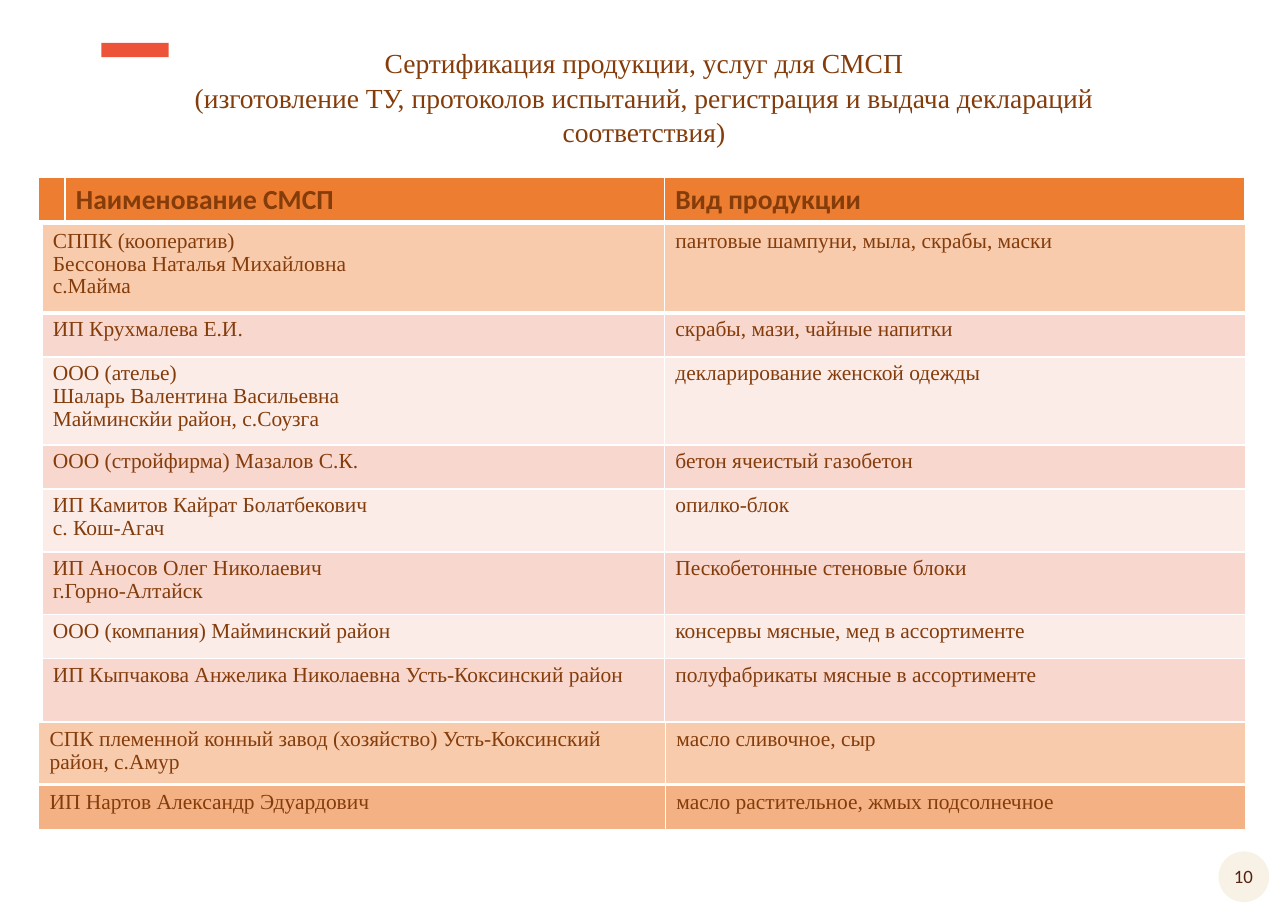
from lxml.etree import SubElement
from pptx import Presentation
from pptx.dml.color import RGBColor
from pptx.enum.shapes import MSO_SHAPE
from pptx.enum.text import MSO_ANCHOR, PP_ALIGN
from pptx.oxml.ns import qn
from pptx.util import Inches, Pt

COLORS = {
    "text": "843C0B", "header": "ED7D31", "peach": "F8CBAD", "orange": "F4B183",
    "pink": "F8D7CE", "pale": "FCECE8", "border": "FFFFFF",
    "accent": "ED5338", "badge": "F7F2E5", "number": "562212",
}
SERIF, SANS = "Times New Roman", "Calibri"

TITLE = [
    "Сертификация продукции, услуг для СМСП",
    "(изготовление ТУ, протоколов испытаний, регистрация и выдача деклараций соответствия)",
]
PAGE_NUMBER = "10"

HEADER = [(0.41, "header", 3, [[], ["Наименование СМСП"], ["Вид продукции"]])]
PRODUCERS = [
    (0.8, "peach", 3, [["СППК (кооператив)", "Бессонова Наталья Михайловна", "с.Майма"],
                       ["пантовые шампуни, мыла, скрабы, маски"]]),
    (0.4, "pink", 1, [["ИП Крухмалева Е.И."], ["скрабы, мази, чайные напитки"]]),
    (0.8, "pale", 1, [["ООО (ателье)", "Шаларь Валентина Васильевна", "Майминскйи район, с.Соузга"],
                      ["декларирование женской одежды"]]),
    (0.4, "pink", 1, [["ООО (стройфирма) Мазалов С.К."], ["бетон ячеистый газобетон"]]),
    (0.57, "pale", 1, [["ИП Камитов Кайрат Болатбекович", "с. Кош-Агач"], ["опилко-блок"]]),
    (0.57, "pink", 1, [["ИП Аносов Олег Николаевич", "г.Горно-Алтайск"],
                       ["Пескобетонные стеновые блоки"]]),
    (0.4, "pale", 1, [["ООО (компания) Майминский район"],
                      ["консервы мясные, мед в ассортименте"]]),
    (0.57, "pink", 1, [["ИП Кыпчакова Анжелика Николаевна Усть-Коксинский район"],
                       ["полуфабрикаты мясные в ассортименте"]]),
]
STUD_FARM = [(0.57, "peach", 3, [
    ["СПК племенной конный завод (хозяйство) Усть-Коксинский район, с.Амур"],
    ["масло сливочное, сыр"]])]
OIL_PRODUCER = [(0.41, "orange", 3, [
    ["ИП Нартов Александр Эдуардович"], ["масло растительное, жмых подсолнечное"]])]

TABLES = [
    (0.35, 1.61, [0.24, 5.44, 5.27], HEADER, (SANS, 18, True, 1.0)),
    (0.38, 2.04, [5.65, 5.28], PRODUCERS, (SERIF, 14, False, 0.96)),
    (0.35, 6.56, [5.69, 5.27], STUD_FARM, (SERIF, 14, False, 0.96)),
    (0.35, 7.13, [5.69, 5.27], OIL_PRODUCER, (SERIF, 14, False, 0.96)),
]


def rgb(name):
    return RGBColor.from_string(COLORS[name])


def write(frame, lines, font, size, bold=False, spacing=1.0, align=PP_ALIGN.LEFT, color="text"):
    for index, line in enumerate(lines):
        paragraph = frame.add_paragraph() if index else frame.paragraphs[0]
        paragraph.alignment = align
        paragraph.line_spacing = spacing
        run = paragraph.add_run()
        run.text = line
        run.font.name, run.font.size, run.font.bold = font, Pt(size), bold
        run.font.color.rgb = rgb(color)


def add_block(slide, kind, left, top, width, height, color):
    block = slide.shapes.add_shape(kind, Inches(left), Inches(top), Inches(width), Inches(height))
    block.shadow.inherit = False
    block.fill.solid()
    block.fill.fore_color.rgb = rgb(color)
    block.line.fill.background()


def add_label(slide, left, top, width, height, lines, font, size, **style):
    label = slide.shapes.add_textbox(Inches(left), Inches(top), Inches(width), Inches(height))
    label.text_frame.word_wrap = True
    write(label.text_frame, lines, font, size, align=PP_ALIGN.CENTER, **style)


def set_borders(cell, bottom_width):
    properties = cell._tc.get_or_add_tcPr()
    sides = [("a:lnL", 1), ("a:lnR", 1), ("a:lnT", 1), ("a:lnB", bottom_width)]
    for position, (side, width) in enumerate(sides):
        border = SubElement(properties, qn(side), w=str(Pt(width)))
        SubElement(SubElement(border, qn("a:solidFill")), qn("a:srgbClr"), val=COLORS["border"])
        properties.insert(position, border)


def add_grid(slide, left, top, widths, rows, style):
    height = sum(row[0] for row in rows)
    grid = slide.shapes.add_table(len(rows), len(widths), Inches(left), Inches(top),
                                  Inches(sum(widths)), Inches(height)).table
    grid.first_row = grid.horz_banding = False
    for column, width in zip(grid.columns, widths):
        column.width = Inches(width)
    font, size, bold, spacing = style
    for row, (row_height, color, bottom_width, texts) in zip(grid.rows, rows):
        row.height = Inches(row_height)
        for cell, lines in zip(row.cells, texts):
            cell.fill.solid()
            cell.fill.fore_color.rgb = rgb(color)
            cell.vertical_anchor = MSO_ANCHOR.TOP
            set_borders(cell, bottom_width)
            write(cell.text_frame, lines, font, size, bold, spacing)


def main():
    deck = Presentation()
    deck.slide_width, deck.slide_height = Inches(11.69), Inches(8.27)
    slide = deck.slides.add_slide(deck.slide_layouts[6])
    add_block(slide, MSO_SHAPE.OVAL, 11.06, 7.73, 0.46, 0.46, "badge")
    add_label(slide, 11.03, 7.8, 0.51, 0.31, [PAGE_NUMBER], SANS, 12.3, color="number")
    add_block(slide, MSO_SHAPE.RECTANGLE, 0.92, 0.39, 0.61, 0.13, "accent")
    add_label(slide, 1.49, 0.36, 8.71, 1.01, TITLE, SERIF, 18, spacing=1.04)
    for table in TABLES:
        add_grid(slide, *table)
    deck.save("out.pptx")


if __name__ == "__main__":
    main()
